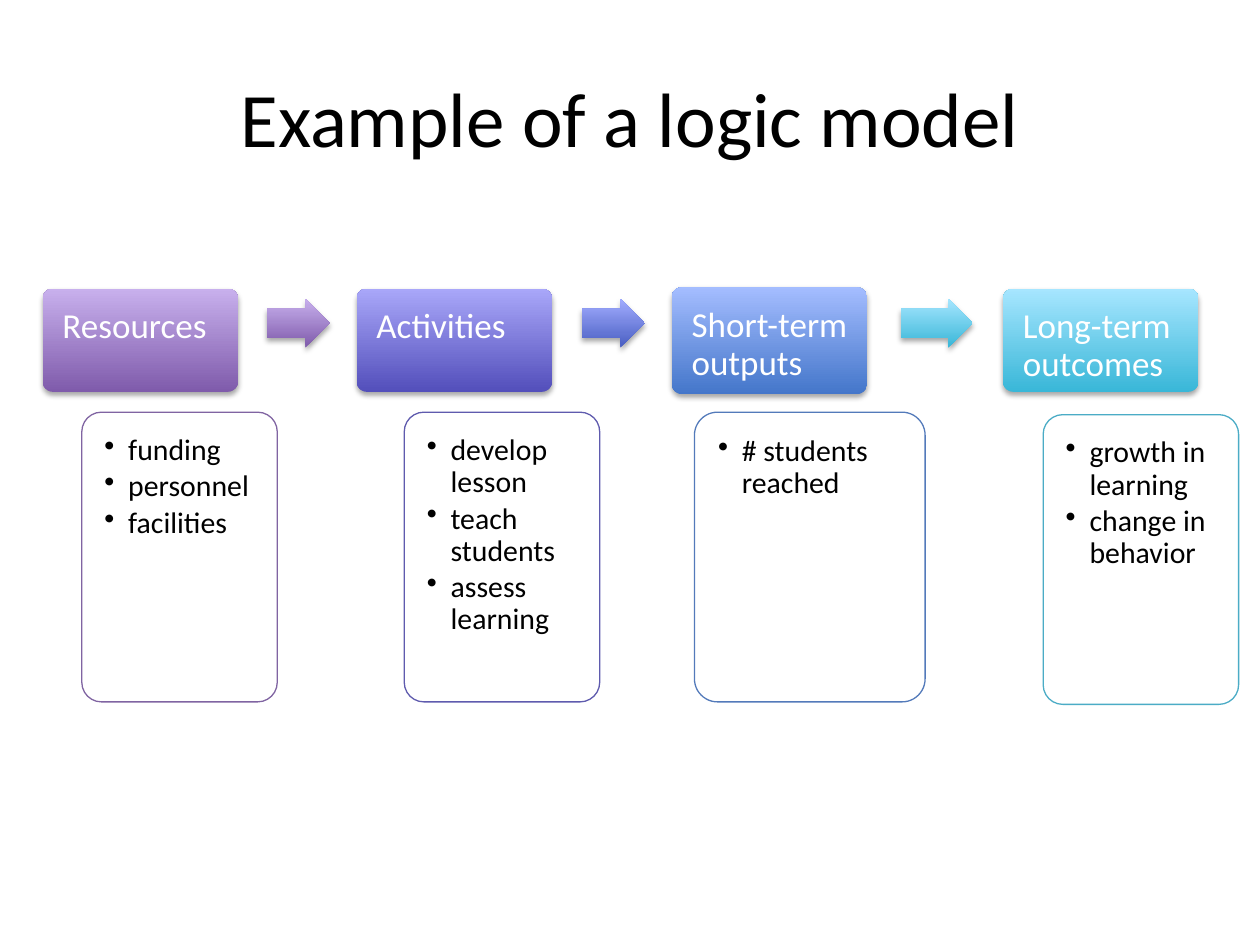
"""Build a slide that shows a four-stage logic model."""
from collections import namedtuple
from dataclasses import dataclass

from lxml.etree import SubElement
from pptx import Presentation
from pptx.dml.color import RGBColor
from pptx.enum.shapes import MSO_SHAPE
from pptx.enum.text import MSO_ANCHOR, PP_ALIGN
from pptx.oxml.ns import qn
from pptx.util import Cm, Pt


@dataclass(frozen=True)
class Theme:
    font: str = "Calibri"
    title_size: int = 44
    header_size: int = 20
    list_size: int = 17
    ink: str = "000000"
    paper: str = "FFFFFF"
    purple: tuple = ("7F5BAB", "C8B0ED")
    violet: tuple = ("534FBB", "A9A7F9")
    indigo: tuple = ("495EC2", "A2ADFF")
    blue: tuple = ("4476CA", "A4BDFF")
    aqua: tuple = ("39B7D8", "A7E6FF")
    outlines: tuple = ("8064A2", "5F5BAE", "537ABA", "4BACC6")


Stage = namedtuple("Stage", "name items gradient outline header card")
Arrow = namedtuple("Arrow", "left width gradient")

theme = Theme()
stages = [
    Stage("Resources", ["funding", "personnel", "facilities"], theme.purple,
          theme.outlines[0], (0.86, 5.82, 3.94, 2.08), (1.65, 8.31, 3.94, 5.84)),
    Stage("Activities", ["develop lesson", "teach students", "assess learning"], theme.violet,
          theme.outlines[1], (7.19, 5.82, 3.94, 2.08), (8.15, 8.31, 3.94, 5.84)),
    Stage("Short-term outputs", ["# students reached"], theme.blue,
          theme.outlines[2], (13.54, 5.79, 3.94, 2.16), (14, 8.31, 4.65, 5.84)),
    Stage("Long-term outcomes", ["growth in learning", "change in behavior"], theme.aqua,
          theme.outlines[3], (20.22, 5.82, 3.94, 2.08), (21.03, 8.36, 3.94, 5.84)),
]
arrows = [
    Arrow(5.38, 1.27, theme.purple),
    Arrow(11.73, 1.27, theme.indigo),
    Arrow(18.16, 1.45, theme.aqua),
]


def add_raised_shape(kind, bounds, gradient):
    shape = slide.shapes.add_shape(kind, *map(Cm, bounds))
    shape.line.fill.background()
    shape.fill.gradient()
    shape.fill.gradient_angle = 90
    for stop, color in zip(shape.fill.gradient_stops, gradient):
        stop.color.rgb = RGBColor.from_string(color)
    shape.shadow.inherit = False
    effects = shape.element.spPr.find(qn("a:effectLst"))
    shadow = SubElement(effects, qn("a:outerShdw"), blurRad=str(Pt(3.1)),
                        dist=str(Pt(1.8)), dir="5400000", rotWithShape="0")
    color = SubElement(shadow, qn("a:srgbClr"), val=theme.ink)
    SubElement(color, qn("a:alpha"), val="35000")
    return shape


def write_lines(box, lines, size, color, space_after):
    frame = box.text_frame
    frame.word_wrap = True
    frame.vertical_anchor = MSO_ANCHOR.TOP
    frame.margin_left = frame.margin_top = Cm(0.34)
    frame.margin_right = frame.margin_bottom = Cm(0.2)
    frame.text = "\n".join(lines)
    for para in frame.paragraphs:
        para.alignment = PP_ALIGN.LEFT
        para.line_spacing = 0.9
        para.space_after = Pt(space_after)
        para.font.name = theme.font
        para.font.size = Pt(size)
        para.font.color.rgb = RGBColor.from_string(color)
    return frame.paragraphs


deck = Presentation()
deck.slide_width, deck.slide_height = Cm(25.4), Cm(19.05)
slide = deck.slides.add_slide(deck.slide_layouts[5])

title = slide.shapes.title
title.left, title.top, title.width, title.height = map(Cm, (1.27, 0.76, 22.86, 3.18))
title.text_frame.text = "Example of a logic model"
title.text_frame.vertical_anchor = MSO_ANCHOR.MIDDLE
heading = title.text_frame.paragraphs[0]
heading.alignment = PP_ALIGN.CENTER
heading.font.name = theme.font
heading.font.size = Pt(theme.title_size)
heading.font.color.rgb = RGBColor.from_string(theme.ink)

for stage in stages:
    header = add_raised_shape(MSO_SHAPE.ROUNDED_RECTANGLE, stage.header, stage.gradient)
    header.adjustments[0] = 0.1
    write_lines(header, [stage.name], theme.header_size, theme.paper, 7)

    card = slide.shapes.add_shape(MSO_SHAPE.ROUNDED_RECTANGLE, *map(Cm, stage.card))
    card.adjustments[0] = 0.1
    card.shadow.inherit = False
    card.fill.solid()
    card.fill.fore_color.rgb = RGBColor.from_string(theme.paper)
    card.line.color.rgb = RGBColor.from_string(stage.outline)
    card.line.width = Pt(0.75)
    for para in write_lines(card, stage.items, theme.list_size, theme.ink, 2.5):
        properties = para._p.get_or_add_pPr()
        properties.set("marL", str(Cm(0.48)))
        properties.set("indent", str(Cm(-0.48)))
        bullet = properties.makeelement(qn("a:buChar"), {"char": "•"})
        properties.find(qn("a:defRPr")).addprevious(bullet)

for arrow in arrows:
    pointer = add_raised_shape(MSO_SHAPE.RIGHT_ARROW, (arrow.left, 6.02, arrow.width, 0.99),
                               arrow.gradient)
    pointer.adjustments[0] = 0.6

deck.save("out.pptx")
